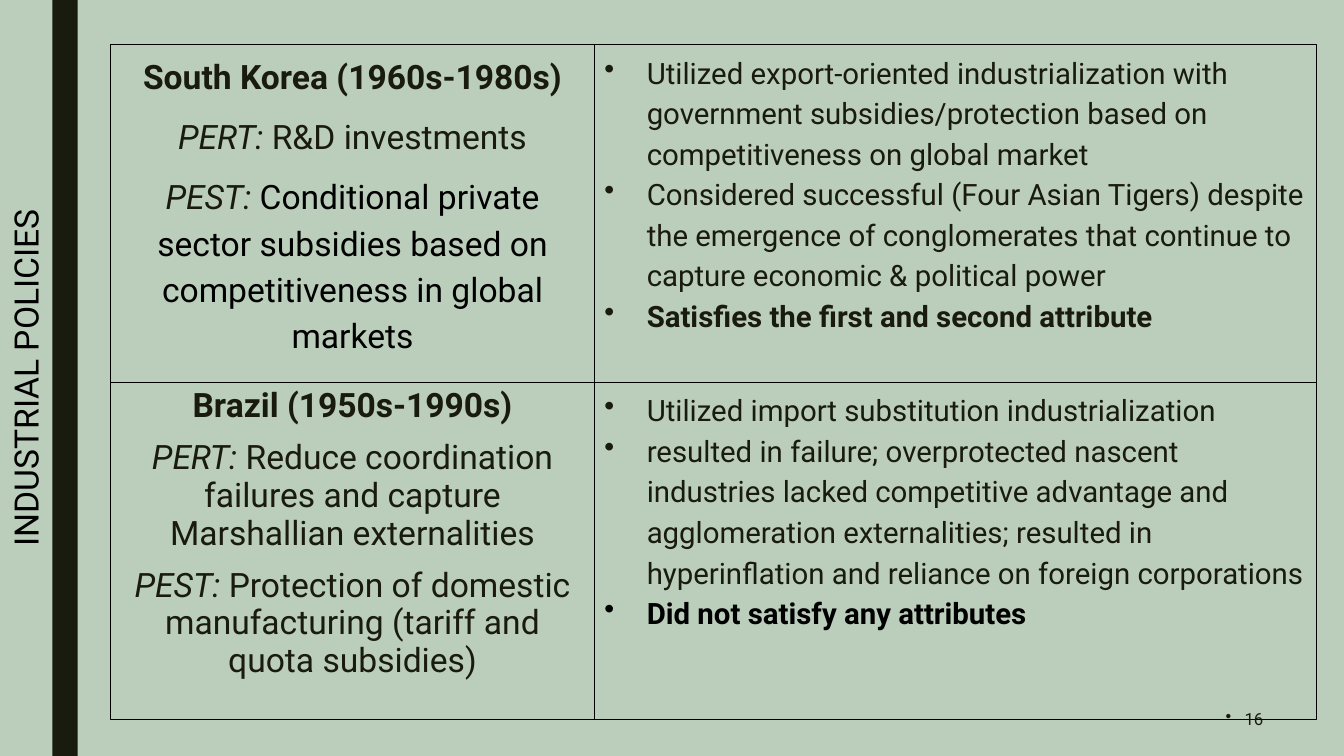
from dataclasses import dataclass

from lxml.etree import SubElement
from pptx import Presentation
from pptx.dml.color import RGBColor
from pptx.enum.shapes import MSO_SHAPE
from pptx.enum.text import MSO_ANCHOR, PP_ALIGN
from pptx.oxml.ns import qn
from pptx.util import Cm, Pt


@dataclass(frozen=True)
class Theme:
    font: str = "Roboto"
    background: RGBColor = RGBColor(0xBB, 0xCD, 0xBB)
    dark: RGBColor = RGBColor(0x19, 0x1B, 0x0E)
    black: RGBColor = RGBColor(0, 0, 0)
    heading_size: int = 24
    bullet_size: int = 21
    number_size: int = 12
    border: float = 0.75


THEME = Theme()
SLIDE_WIDTH, SLIDE_HEIGHT = Cm(33.87), Cm(19.05)
GRID_LEFT, GRID_TOP = Cm(2.79), Cm(1.12)
POLICY_WIDTH, OUTCOME_WIDTH, ROW_HEIGHT = Cm(12.19), Cm(18.21), Cm(8.51)


@dataclass(frozen=True)
class Country:
    name: str
    pert: str
    pest: str
    outcomes: tuple
    verdict: str
    line_spacing: float
    pest_color: RGBColor = THEME.dark
    verdict_color: RGBColor = THEME.dark


COUNTRIES = (
    Country(
        "South Korea (1960s-1980s)",
        "R&D investments",
        "Conditional private sector subsidies based on competitiveness in global markets",
        (
            "Utilized export-oriented industrialization with government "
            "subsidies/protection based on competitiveness on global market",
            "Considered successful (Four Asian Tigers) despite the emergence of "
            "conglomerates that continue to capture economic & political power",
        ),
        "Satisfies the first and second attribute",
        line_spacing=1.15,
        pest_color=THEME.black,
    ),
    Country(
        "Brazil (1950s-1990s)",
        "Reduce coordination failures and capture Marshallian externalities",
        "Protection of domestic manufacturing (tariff and quota subsidies)",
        (
            "Utilized import substitution industrialization",
            "resulted in failure; overprotected nascent industries lacked "
            "competitive advantage and agglomeration externalities; resulted in "
            "hyperinflation and reliance on foreign corporations",
        ),
        "Did not satisfy any attributes",
        line_spacing=0.94,
        verdict_color=THEME.black,
    ),
)


def add_text(paragraph, text, size, color=THEME.dark, bold=False, italic=False):
    run = paragraph.add_run()
    run.text = text
    font = run.font
    font.name, font.size = THEME.font, Pt(size)
    font.bold, font.italic = bold, italic
    font.color.rgb = color


def add_bullet(paragraph, indent):
    """Give the paragraph a hanging bullet; call after its spacing is set."""
    properties = paragraph._p.get_or_add_pPr()
    properties.set("marL", str(indent))
    properties.set("indent", str(-indent))
    SubElement(properties, qn("a:buChar"), char="•")


def next_paragraph(frame):
    """Return the empty first paragraph, or a new one once that is used."""
    first = frame.paragraphs[0]
    return frame.add_paragraph() if first.runs else first


def add_cell(slide, left, top, width):
    cell = slide.shapes.add_shape(MSO_SHAPE.RECTANGLE, left, top, width, ROW_HEIGHT)
    cell.shadow.inherit = False
    cell.fill.background()
    cell.line.color.rgb = THEME.black
    cell.line.width = Pt(THEME.border)
    frame = cell.text_frame
    frame.word_wrap = True
    frame.vertical_anchor = MSO_ANCHOR.TOP
    return frame


def add_policy(slide, country, top):
    frame = add_cell(slide, GRID_LEFT, top, POLICY_WIDTH)

    def centred_paragraph():
        paragraph = next_paragraph(frame)
        paragraph.alignment = PP_ALIGN.CENTER
        paragraph.line_spacing = country.line_spacing
        paragraph.space_before = Pt(10)
        return paragraph

    add_text(centred_paragraph(), country.name, THEME.heading_size, bold=True)
    for label, policy, color in (
        ("PERT: ", country.pert, THEME.dark),
        ("PEST: ", country.pest, country.pest_color),
    ):
        paragraph = centred_paragraph()
        add_text(paragraph, label, THEME.heading_size, italic=True)
        add_text(paragraph, policy, THEME.heading_size, color)


def add_outcomes(slide, country, top):
    frame = add_cell(slide, GRID_LEFT + POLICY_WIDTH, top, OUTCOME_WIDTH)
    for index, outcome in enumerate((*country.outcomes, country.verdict)):
        is_verdict = index == len(country.outcomes)
        paragraph = next_paragraph(frame)
        paragraph.alignment = PP_ALIGN.LEFT
        paragraph.line_spacing = 1.15
        paragraph.space_before = Pt(0 if index else 10)
        paragraph.space_after = Pt(2 if is_verdict else 0)
        add_bullet(paragraph, Cm(1.07))
        color = country.verdict_color if is_verdict else THEME.dark
        add_text(paragraph, outcome, THEME.bullet_size, color, bold=is_verdict)


def add_side_bar(slide):
    bar = slide.shapes.add_shape(
        MSO_SHAPE.RECTANGLE, Cm(1.32), 0, Cm(0.64), SLIDE_HEIGHT
    )
    bar.shadow.inherit = False
    bar.fill.solid()
    bar.fill.fore_color.rgb = THEME.dark
    bar.line.fill.background()


def add_side_title(slide, title):
    frame = slide.shapes.add_textbox(0, 0, Cm(1.55), SLIDE_HEIGHT).text_frame
    frame.word_wrap = True
    frame._txBody.bodyPr.set("vert", "vert270")
    paragraph = frame.paragraphs[0]
    paragraph.alignment = PP_ALIGN.CENTER
    add_text(paragraph, title, THEME.heading_size, THEME.black)


def add_page_number(slide, number):
    frame = slide.shapes.add_textbox(
        Cm(27.64), Cm(17.55), Cm(4.45), Cm(1.12)
    ).text_frame
    frame.word_wrap = True
    frame.vertical_anchor = MSO_ANCHOR.MIDDLE
    paragraph = frame.paragraphs[0]
    paragraph.alignment = PP_ALIGN.RIGHT
    add_bullet(paragraph, Cm(0.48))
    add_text(paragraph, number, THEME.number_size)


def main():
    presentation = Presentation()
    presentation.slide_width = SLIDE_WIDTH
    presentation.slide_height = SLIDE_HEIGHT
    slide = presentation.slides.add_slide(presentation.slide_layouts[6])
    slide.background.fill.solid()
    slide.background.fill.fore_color.rgb = THEME.background

    add_side_bar(slide)
    add_side_title(slide, "INDUSTRIAL POLICIES")
    for row, country in enumerate(COUNTRIES):
        top = GRID_TOP + row * ROW_HEIGHT
        add_policy(slide, country, top)
        add_outcomes(slide, country, top)
    add_page_number(slide, "16")
    presentation.save("out.pptx")


if __name__ == "__main__":
    main()
